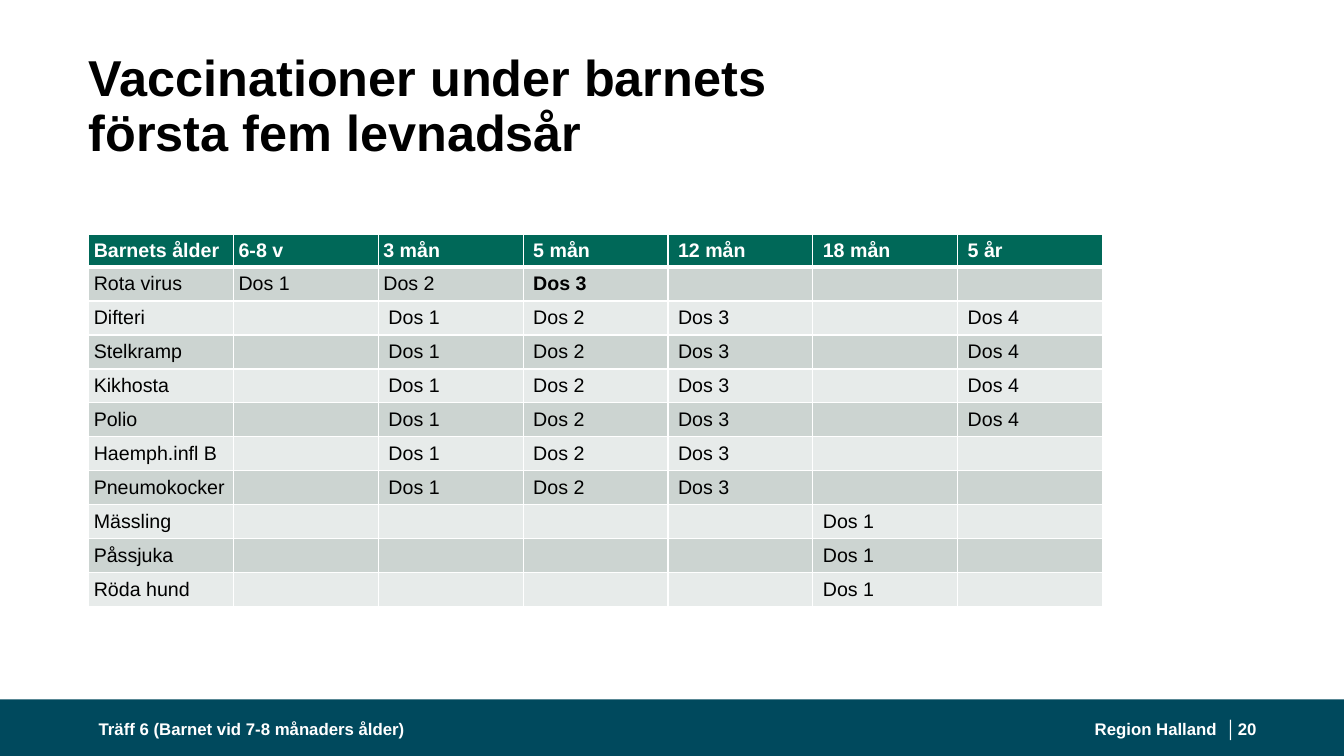
from dataclasses import dataclass
from typing import Any

from lxml import etree
from pptx import Presentation
from pptx.dml.color import RGBColor
from pptx.enum.shapes import MSO_SHAPE
from pptx.enum.text import MSO_ANCHOR, MSO_AUTO_SIZE, PP_ALIGN
from pptx.oxml.ns import qn
from pptx.util import Inches, Pt

RECT = MSO_SHAPE.RECTANGLE
MIDDLE, TOP = MSO_ANCHOR.MIDDLE, MSO_ANCHOR.TOP
NO_FIT = MSO_AUTO_SIZE.NONE
LEFT, RIGHT = PP_ALIGN.LEFT, PP_ALIGN.RIGHT


@dataclass(frozen=True)
class Theme:
    font: str = "Arial"
    text: str = "000000"
    light: str = "FFFFFF"
    bar: str = "00495D"
    header: str = "006858"
    bands: tuple[str, str] = ("CCD4D1", "E7EBEA")
    title_pt: int = 36
    table_pt: int = 14
    footer_pt: int = 12
    rule_pt: int = 1
    header_rule_pt: int = 3


@dataclass(frozen=True)
class Box:
    col: float
    row: float
    cols: float
    rows: float

    def place(self) -> dict[str, int]:
        return {"left": int(self.col * COL), "top": int(self.row * ROW),
                "width": int(self.cols * COL), "height": int(self.rows * ROW)}


@dataclass(frozen=True)
class Footer:
    text: str
    box: Box
    align: Any = LEFT
    anchor: Any = MIDDLE
    inset: tuple[float, float] = (0, 0)


@dataclass(frozen=True)
class Vaccine:
    name: str
    first_age: int
    doses: int
    booster: bool = False


THEME = Theme()
WIDTH, HEIGHT = Inches(13.33), Inches(7.5)
COL, ROW = WIDTH / 120, HEIGHT / 60

TITLE = "Vaccinationer under barnets\vförsta fem levnadsår"
TITLE_BOX = Box(7.92, 2.88, 104.22, 11.36)
BAR_BOX = Box(0, 55.5, 120, 4.5)
TABLE_COL, TABLE_ROW = 12.93, 2.4
BOLD_DOSE = (1, 3)

AGES = ["Barnets ålder", "6-8 v", "3 mån", "5 mån", "12 mån", "18 mån", "5 år"]
VACCINES = [
    Vaccine("Rota virus", 1, 3),
    Vaccine("Difteri", 2, 3, True),
    Vaccine("Stelkramp", 2, 3, True),
    Vaccine("Kikhosta", 2, 3, True),
    Vaccine("Polio", 2, 3, True),
    Vaccine("Haemph.infl B", 2, 3),
    Vaccine("Pneumokocker", 2, 3),
    Vaccine("Mässling", 5, 1),
    Vaccine("Påssjuka", 5, 1),
    Vaccine("Röda hund", 5, 1),
]
FOOTERS = [
    Footer("Region Halland  │", Box(96.3, 56.48, 14.13, 2.8), RIGHT),
    Footer("Träff 6 (Barnet vid 7-8 månaders ålder)",
           Box(7.92, 56.64, 69.39, 2.4), anchor=TOP, inset=(0.1, 0.05)),
    Footer("20", Box(110.52, 56.48, 2.16, 2.8)),
]


def apply(target: Any, values: dict[str, Any]) -> None:
    for name, value in values.items():
        setattr(target, name, value)


def margins(x: float, y: float) -> dict[str, int]:
    return {"margin_left": Inches(x), "margin_right": Inches(x),
            "margin_top": Inches(y), "margin_bottom": Inches(y)}


def write(p: Any, text: str, size: int, color: str, bold: bool) -> None:
    p.text = text
    for r in p.runs:
        apply(r.font, {"name": THEME.font, "size": Pt(size), "bold": bold})
        r.font.color.rgb = RGBColor.from_string(color)


def dose_row(vaccine: Vaccine) -> list[str]:
    row = [vaccine.name] + [""] * (len(AGES) - 1)
    for dose in range(vaccine.doses):
        row[vaccine.first_age + dose] = f"Dos {dose + 1}"
    if vaccine.booster:
        row[-1] = f"Dos {vaccine.doses + 1}"
    return row


def add_borders(cell: Any, row: int) -> None:
    tcPr = cell._tc.get_or_add_tcPr()
    widths = {"lnL": THEME.rule_pt, "lnR": THEME.rule_pt,
              "lnT": THEME.header_rule_pt if row == 1 else THEME.rule_pt,
              "lnB": THEME.header_rule_pt if row == 0 else THEME.rule_pt}
    for i, (side, width) in enumerate(widths.items()):
        ln = etree.Element(qn(f"a:{side}"), w=str(Pt(width)))
        fill = etree.SubElement(ln, qn("a:solidFill"))
        etree.SubElement(fill, qn("a:srgbClr"), val=THEME.light)
        tcPr.insert(i, ln)


def format_cell(cell: Any, text: str, row: int, col: int) -> None:
    header = row == 0
    tight = col == 0 or (row < 2 and col < 3)
    apply(cell, {"vertical_anchor": MIDDLE,
                 **(margins(0.05, 0) if tight else margins(0.1, 0.05))})
    cell.fill.solid()
    color = THEME.header if header else THEME.bands[(row - 1) % 2]
    cell.fill.fore_color.rgb = RGBColor.from_string(color)
    add_borders(cell, row)
    p = cell.text_frame.paragraphs[0]
    if text:
        write(p, text, THEME.table_pt, THEME.light if header else THEME.text,
              header or (row, col) == BOLD_DOSE)
    else:
        etree.SubElement(p._p, qn("a:endParaRPr"), sz=str(THEME.table_pt * 100))


def add_schedule(s: Any) -> None:
    rows = [AGES] + [dose_row(v) for v in VACCINES]
    box = Box(7.92, 18.64, TABLE_COL * len(AGES), TABLE_ROW * len(rows))
    table = s.shapes.add_table(len(rows), len(AGES), **box.place()).table
    table.horz_banding = False
    for column in table.columns:
        column.width = int(TABLE_COL * COL)
    for i, row in enumerate(rows):
        table.rows[i].height = int(TABLE_ROW * ROW)
        for j, text in enumerate(row):
            format_cell(table.cell(i, j), text, i, j)


def add_title(s: Any) -> None:
    sp = s.shapes.title
    apply(sp, TITLE_BOX.place())
    tf = sp.text_frame
    apply(tf, {"word_wrap": True, "auto_size": NO_FIT,
               "vertical_anchor": MIDDLE, **margins(0, 0)})
    p = tf.paragraphs[0]
    write(p, TITLE, THEME.title_pt, THEME.text, True)
    apply(p, {"alignment": LEFT, "line_spacing": 0.9})


def add_bar(s: Any) -> None:
    sp = s.shapes.add_shape(RECT, **BAR_BOX.place())
    sp.shadow.inherit = False
    sp.fill.solid()
    sp.fill.fore_color.rgb = RGBColor.from_string(THEME.bar)
    sp.line.fill.background()


def add_footer(s: Any, footer: Footer) -> None:
    tf = s.shapes.add_textbox(**footer.box.place()).text_frame
    apply(tf, {"word_wrap": True, "vertical_anchor": footer.anchor,
               **margins(*footer.inset)})
    p = tf.paragraphs[0]
    write(p, footer.text, THEME.footer_pt, THEME.light, True)
    p.alignment = footer.align


def main() -> None:
    prs = Presentation()
    apply(prs, {"slide_width": WIDTH, "slide_height": HEIGHT})
    s = prs.slides.add_slide(prs.slide_layouts[5])
    add_bar(s)
    add_title(s)
    add_schedule(s)
    for footer in FOOTERS:
        add_footer(s, footer)
    prs.save("out.pptx")


if __name__ == "__main__":
    main()
